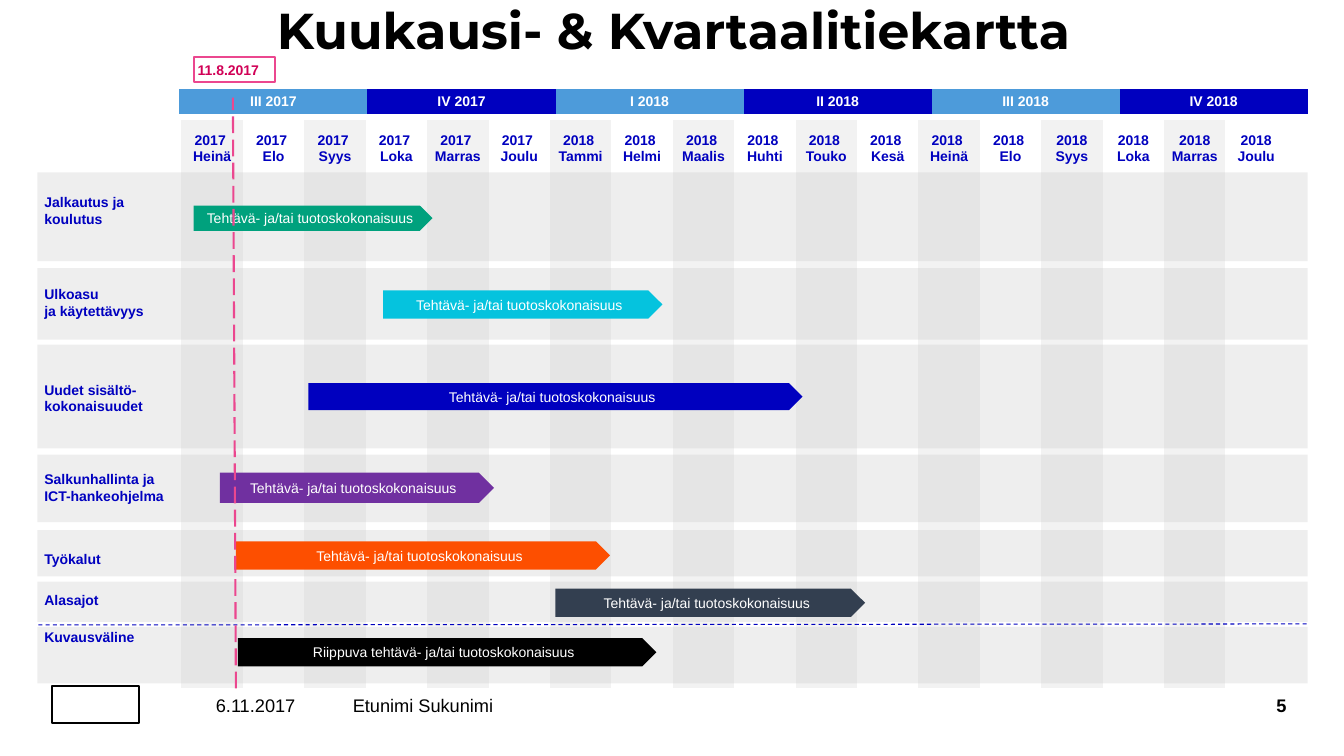
from lxml.etree import SubElement as Sub
from pptx import Presentation
from pptx.dml.color import RGBColor as RGB
from pptx.enum.dml import MSO_LINE as Dash
from pptx.enum.shapes import MSO_CONNECTOR as Link, MSO_SHAPE as Form
from pptx.enum.text import MSO_ANCHOR as Anchor, PP_ALIGN as Align
from pptx.oxml.ns import qn
from pptx.util import Inches, Pt

HUES = {
    "black": "000000", "white": "FFFFFF", "navy": "0000BF", "sky": "4D9BDA",
    "stripe": "F2F2F2", "band": "BFBFBF", "pink": "EB478F", "rose": "D10056",
    "green": "00A17D", "cyan": "05C3DE", "violet": "7030A0",
    "orange": "FD4F00", "slate": "333F50",
}
PLAIN = "{2D5ABB26-0587-4C30-8999-92F81FD0307C}"  # no style, no grid
TASK = "Tehtävä- ja/tai tuotoskokonaisuus"
QUARTERS = ["III 2017", "IV 2017", "I 2018", "II 2018", "III 2018", "IV 2018"]
MONTHS = ("Heinä Elo Syys Loka Marras Joulu Tammi Helmi Maalis Huhti Touko Kesä "
          "Heinä Elo Syys Loka Marras Joulu").split()

# Band top and height, label, label offset and width,
# bar left, offset, width and height, bar hue, bar text
LANES = [
    (1.71, 0.88, "Jalkautus ja\nkoulutus", 0.17, 1.09,
     1.92, 0.33, 2.37, 0.25, "green", TASK),
    (2.66, 0.71, "Ulkoasu\nja käytettävyys", 0.13, 1.31,
     3.8, 0.22, 2.77, 0.28, "cyan", TASK),
    (3.42, 1.03, "Uudet sisältö-\nkokonaisuudet", 0.32, 1.49,
     3.06, 0.38, 4.9, 0.27, "navy", TASK),
    (4.51, 0.67, "Salkunhallinta ja ICT-hankeohjelma", 0.12, 1.4,
     2.18, 0.18, 2.72, 0.3, "violet", TASK),
    (5.26, 0.46, "Työkalut", 0.16, 1.22,
     2.34, 0.11, 3.71, 0.28, "orange", TASK),
    (5.77, 0.4, "Alasajot", 0.06, 1.28,
     5.51, 0.07, 3.07, 0.28, "slate", TASK),
    (6.22, 0.56, "Kuvausväline", -0.03, 1.29,
     2.36, 0.11, 4.15, 0.28, "black", "Riippuva tehtävä- ja/tai tuotoskokonaisuus"),
]


def hue(name):
    return RGB.from_string(HUES[name])


def place(box):
    return [Inches(v) for v in box]


def style(frame, size, color, bold=False, align=Align.LEFT, font="Arial"):
    for para in frame.paragraphs:
        para.alignment = align
        for run in para.runs:
            run.font.size, run.font.bold, run.font.name = Pt(size), bold, font
            run.font.color.rgb = hue(color)


def inset(item, left, top, right, low):
    item.margin_left, item.margin_top = Inches(left), Inches(top)
    item.margin_right, item.margin_bottom = Inches(right), Inches(low)


def label(slide, box, text, size, color, bold=False, align=Align.LEFT,
          font="Arial", pad=0, anchor=Anchor.TOP):
    frame = slide.shapes.add_textbox(*place(box)).text_frame
    frame.word_wrap = True
    frame.vertical_anchor = anchor
    inset(frame, pad, pad, pad, pad)
    frame.text = text
    style(frame, size, color, bold, align, font)
    return frame


def shape(slide, form, box, fill=None, line=None):
    item = slide.shapes.add_shape(form, *place(box))
    item.shadow.inherit = False
    if fill:
        item.fill.solid()
        item.fill.fore_color.rgb = hue(fill)
    else:
        item.fill.background()
    if line:
        item.line.color.rgb = hue(line)
        item.line.width = Pt(1.5)
    else:
        item.line.fill.background()
    return item


def rule(slide, ends, color, width, dash):
    item = slide.shapes.add_connector(Link.STRAIGHT, *place(ends))
    item.line.color.rgb = hue(color)
    item.line.width = Pt(width)
    item.line.dash_style = dash
    Sub(item.element.spPr, qn("a:effectLst"))


def grid(slide, box, rows, cols):
    frame = slide.shapes.add_table(rows, cols, *place(box))
    for tag in frame.element.iter(qn("a:tableStyleId")):
        tag.text = PLAIN
    for col in frame.table.columns:
        col.width = Inches(box[2] / cols)
    return frame.table


def cell(item, text, fill, color):
    inset(item, 0.01, 0.01, 0.01, 0)
    item.vertical_anchor = Anchor.MIDDLE
    if fill:
        item.fill.solid()
        item.fill.fore_color.rgb = hue(fill)
    else:
        item.fill.background()
    item.text_frame.text = text
    style(item.text_frame, 10, color, True, Align.CENTER)


def title(slide, box):
    frame = label(slide, box, "Kuukausi- & Kvartaalitiekartta", 36, "black",
                  True, Align.CENTER, "Montserrat")
    frame.paragraphs[0].line_spacing = 0.9


def quarters(slide, box):
    table = grid(slide, box, 1, len(QUARTERS))
    table.rows[0].height = Inches(box[3])
    for i, name in enumerate(QUARTERS):
        cell(table.cell(0, i), name, "navy" if i % 2 else "sky", "white")


def months(slide, box, head):
    table = grid(slide, box, 2, len(MONTHS))
    table.rows[0].height = Inches(head)
    table.rows[1].height = Inches(box[3] - head)
    for i, name in enumerate(MONTHS):
        year = "2017" if i < 6 else "2018"
        gap = " " if i < 14 else ""
        fill = None if i % 2 else "stripe"
        cell(table.cell(0, i), f"{year}{gap}\n{name}", fill, "navy")
        cell(table.cell(1, i), "", fill, "navy")


def lane(slide, box, name, drop, wide, left, down, width, tall, color, text):
    x, y = box[:2]
    # Translucent band
    band = shape(slide, Form.RECTANGLE, box, "band")
    tint = band.element.spPr.find(qn("a:solidFill"))[0]
    Sub(tint, qn("a:alpha")).set("val", "25000")
    # Lane name
    label(slide, (x + 0.03, y + drop, wide, 0.25 + 0.17 * name.count("\n")),
          name, 10, "navy", True, pad=0.04)
    # Task bar
    bar = shape(slide, Form.PENTAGON, (left, y + down, width, tall), color)
    frame = bar.text_frame
    frame.word_wrap = True
    frame.vertical_anchor = Anchor.MIDDLE
    inset(frame, 0, 0.04, 0, 0.04)
    frame.text = text
    style(frame, 10, "white", align=Align.CENTER)


def today(slide, box):
    x, y, w, h = box
    flag = shape(slide, Form.RECTANGLE, (x, y, w, 0.24), line="pink")
    frame = flag.text_frame
    frame.word_wrap = True
    frame.vertical_anchor = Anchor.TOP
    inset(frame, 0.04, 0.04, 0.04, 0.04)
    frame.text = "11.8.2017"
    style(frame, 10, "rose", True)
    rule(slide, (x + 0.42, y + h, x + 0.39, y + 0.4), "pink", 1.5, Dash.LONG_DASH)


def footer(slide, box):
    x, y, w, h = box
    # Plain shape for the emblem
    shape(slide, Form.RECTANGLE, (x + 0.01, y - 0.05, 0.86, 0.36), line="black")
    mid = Anchor.MIDDLE
    label(slide, (x + 1.31, y, 1.43, h), "6.11.2017", 13, "black",
          align=Align.CENTER, anchor=mid)
    label(slide, (x + 2.99, y, 3.07, h), "Etunimi Sukunimi", 13, "black", anchor=mid)
    label(slide, (x + w - 1.35, y, 1.35, h), "5", 13, "black", True,
          Align.RIGHT, anchor=mid)


def main():
    deck = Presentation()
    deck.slide_width, deck.slide_height = Inches(13.33), Inches(7.5)
    slide = deck.slides.add_slide(deck.slide_layouts[6])
    footer(slide, (0.51, 6.86, 12.25, 0.28))
    quarters(slide, (1.78, 0.88, 11.19, 0.25))
    months(slide, (1.8, 1.19, 10.97, 5.64), 0.56)
    for top, tall, *rest in LANES:
        lane(slide, (0.37, top, 12.6, tall), *rest)
    rule(slide, (0.38, 6.2, 12.97, 6.19), "navy", 0.75, Dash.DASH)
    today(slide, (1.92, 0.57, 0.81, 6.26))
    title(slide, (2.07, 0.06, 9.22, 0.45))
    deck.save("out.pptx")


if __name__ == "__main__":
    main()
